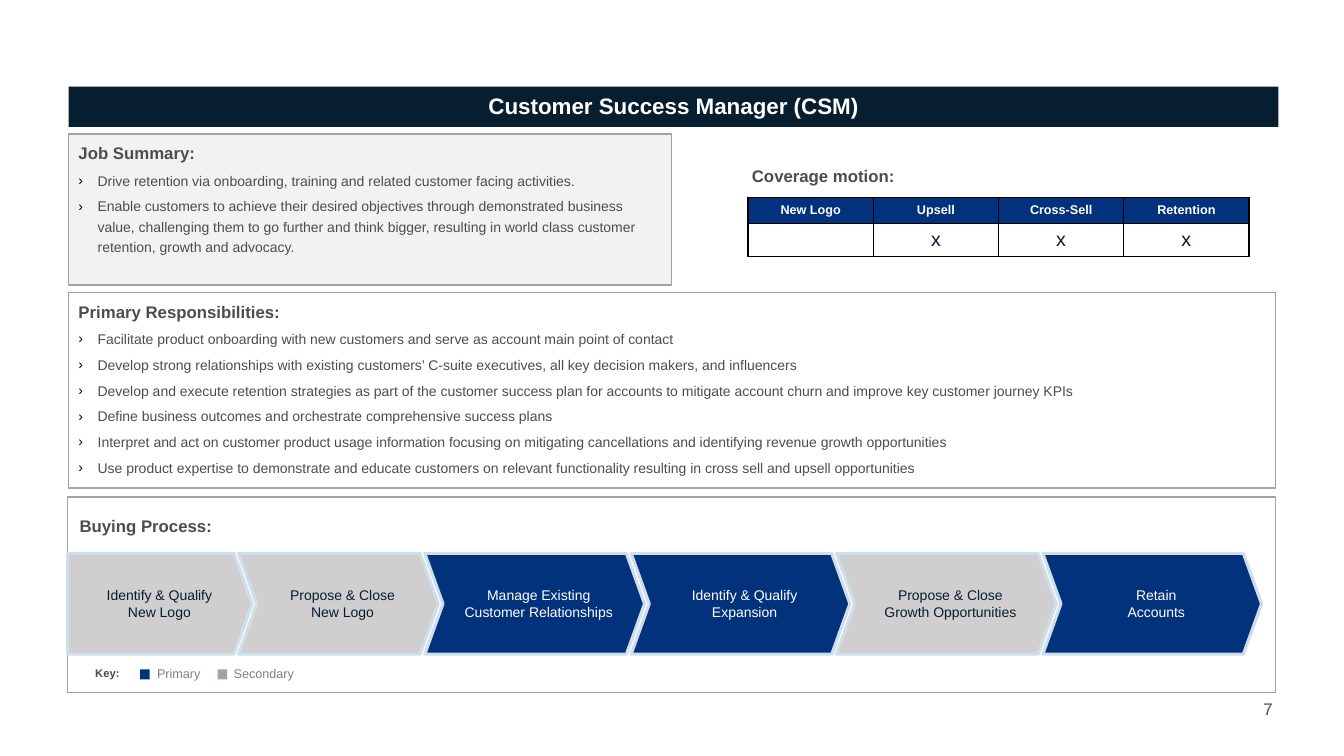
from dataclasses import dataclass

from lxml import etree
from pptx import Presentation
from pptx import util as u
from pptx.dml.color import RGBColor
from pptx.enum import shapes, text
from pptx.oxml.ns import qn

NAVY = RGBColor(0x07, 0x1E, 0x31)
BLUE = RGBColor(0x03, 0x32, 0x7C)
ICE = RGBColor(0xCE, 0xDF, 0xEB)
SILVER = RGBColor(0xD0, 0xCE, 0xCE)
GRAY = RGBColor(0x9F, 0xA4, 0x9F)
PALE = RGBColor(0xF2, 0xF2, 0xF2)
WHITE = RGBColor(0xFF, 0xFF, 0xFF)
BLACK = RGBColor(0x00, 0x00, 0x00)
INK = RGBColor(0x4D, 0x4D, 0x4D)
KEY_INK = RGBColor(0x4C, 0x48, 0x46)
LEGEND_INK = RGBColor(0x7F, 0x7F, 0x7F)

FONT = "Arial"
WIDTH, HEIGHT = u.Inches(13.33), u.Inches(7.5)
DEFAULT_INSETS = (0.1, 0.05, 0.1, 0.05)
NO_INSETS = (0, 0, 0, 0)
STEP_INSETS = (0.08, 0.12, 0, 0.12)
STEP_OVERLAP = 1.0
RECT = shapes.MSO_SHAPE.RECTANGLE
CENTER = text.PP_ALIGN.CENTER
MIDDLE = text.MSO_ANCHOR.MIDDLE


@dataclass(frozen=True)
class Area:
    """Percent shares of the slide's width and height."""
    left: float
    top: float
    width: float
    height: float

    def lengths(self) -> tuple[int, int, int, int]:
        return (int(WIDTH * self.left / 100), int(HEIGHT * self.top / 100),
                int(WIDTH * self.width / 100), int(HEIGHT * self.height / 100))


@dataclass(frozen=True)
class Section:
    area: Area
    fill: RGBColor
    heading: str
    points: tuple[str, ...]


@dataclass(frozen=True)
class Step:
    label: str
    width: float
    primary: bool


@dataclass(frozen=True)
class Label:
    area: Area
    words: str
    size: float
    color: RGBColor
    bold: bool = False
    align: text.PP_ALIGN | None = None


@dataclass(frozen=True)
class Swatch:
    left: float
    color: RGBColor


SECTIONS = (
    Section(Area(5.1, 17.73, 44.86, 20), PALE, "Job Summary:", (
        "Drive retention via onboarding, training and related customer facing activities.",
        "Enable customers to achieve their desired objectives through demonstrated business value, "
        "challenging them to go further and think bigger, resulting in world class customer "
        "retention, growth and advocacy.",
    )),
    Section(Area(5.1, 38.67, 89.8, 25.87), WHITE, "Primary Responsibilities:", (
        "Facilitate product onboarding with new customers and serve as account main point of contact",
        "Develop strong relationships with existing customers’ C-suite executives, all key decision "
        "makers, and influencers",
        "Develop and execute retention strategies as part of the customer success plan for accounts "
        "to mitigate account churn and improve key customer journey KPIs",
        "Define business outcomes and orchestrate comprehensive success plans",
        "Interpret and act on customer product usage information focusing on mitigating "
        "cancellations and identifying revenue growth opportunities",
        "Use product expertise to demonstrate and educate customers on relevant functionality "
        "resulting in cross sell and upsell opportunities",
    )),
)
STEPS = (
    Step("Identify & Qualify\nNew Logo", 13.73, False),
    Step("Propose & Close\nNew Logo", 14.85, False),
    Step("Manage Existing\nCustomer Relationships", 16.35, True),
    Step("Identify & Qualify\nExpansion", 16.28, True),
    Step("Propose & Close\nGrowth Opportunities", 16.35, False),
    Step("Retain\nAccounts", 16.28, True),
)
LABELS = (
    Label(Area(5.18, 67.6, 25.2, 4), "Buying Process:", 12, INK, True),
    Label(Area(55.21, 21.33, 17.55, 4), "Coverage motion:", 12, INK, True),
    Label(Area(5.03, 87.47, 5.93, 3.2), "Key:", 8, KEY_INK, True, CENTER),
    Label(Area(10.95, 87.47, 5.63, 3.33), "Primary", 9, LEGEND_INK),
    Label(Area(16.65, 87.47, 7.2, 3.33), "Secondary", 9, LEGEND_INK),
)
SWATCHES = (Swatch(10.43, BLUE), Swatch(16.2, GRAY))
COVERAGE = (("New Logo", "Upsell", "Cross-Sell", "Retention"), ("", "x", "x", "x"))
COVERAGE_AREA = Area(55.66, 26.13, 37.28, 7.8)
COVERAGE_ROWS = (3.4, 4.4)


def write(frame, words: str, *, size: float, color: RGBColor, bold: bool = False,
          align=None, spacing: float | None = None, before: float | None = None,
          after: float | None = None, bullet: str = "") -> None:
    paragraph = frame.paragraphs[0]
    if paragraph.runs:
        paragraph = frame.add_paragraph()
    if bullet:
        properties = paragraph._p.get_or_add_pPr()
        properties.set("marL", str(u.Inches(0.19)))
        properties.set("indent", str(-u.Inches(0.19)))
        tint = etree.SubElement(properties, qn("a:buClr"))
        etree.SubElement(tint, qn("a:srgbClr"), val=str(BLACK))
        etree.SubElement(properties, qn("a:buFont"), typeface=FONT)
        etree.SubElement(properties, qn("a:buChar"), char=bullet)
    paragraph.alignment = align
    if spacing:
        paragraph.line_spacing = spacing
    if before:
        paragraph.space_before = u.Pt(before)
    if after:
        paragraph.space_after = u.Pt(after)
    for index, line in enumerate(words.split("\n")):
        if index:
            paragraph.add_line_break()
        run = paragraph.add_run()
        run.text = line
        run.font.name, run.font.size, run.font.bold = FONT, u.Pt(size), bold
        run.font.color.rgb = color


def prepare(frame, insets: tuple = DEFAULT_INSETS, anchor=text.MSO_ANCHOR.TOP):
    frame.word_wrap = True
    frame.vertical_anchor = anchor
    (frame.margin_left, frame.margin_top,
     frame.margin_right, frame.margin_bottom) = map(u.Inches, insets)
    return frame


def draw_shape(slide, kind, area: Area, fill: RGBColor | None = None,
               line: RGBColor | None = None, weight: float = 1):
    shape = slide.shapes.add_shape(kind, *area.lengths())
    shape.shadow.inherit = False
    for part, color in ((shape.fill, fill), (shape.line.fill, line)):
        if color is None:
            part.background()
        else:
            part.solid()
            part.fore_color.rgb = color
    if line is not None:
        shape.line.width = u.Pt(weight)
    return shape


def draw_section(slide, section: Section) -> None:
    frame = prepare(draw_shape(slide, RECT, section.area, section.fill, GRAY).text_frame)
    left = text.PP_ALIGN.LEFT
    write(frame, section.heading, size=12, color=INK, bold=True, align=left, spacing=1.2, after=2)
    for point in section.points:
        write(frame, point, size=10, color=INK, align=left, spacing=1.2,
              before=2, after=2, bullet="›")


def draw_label(slide, label: Label) -> None:
    frame = prepare(slide.shapes.add_textbox(*label.area.lengths()).text_frame)
    write(frame, label.words, size=label.size, color=label.color,
          bold=label.bold, align=label.align)


def draw_steps(slide, left: float) -> None:
    for index, step in enumerate(STEPS):
        kind = shapes.MSO_SHAPE.CHEVRON if index else shapes.MSO_SHAPE.PENTAGON
        arrow = draw_shape(slide, kind, Area(left, 73.2, step.width, 13.33),
                           BLUE if step.primary else SILVER, ICE, 2.25)
        arrow.adjustments[0] = 0.18
        write(prepare(arrow.text_frame, STEP_INSETS, MIDDLE), step.label, size=10,
              color=WHITE if step.primary else NAVY, align=CENTER)
        left += step.width - STEP_OVERLAP


def border(cell) -> None:
    properties = cell._tc.get_or_add_tcPr()
    for side in ("lnL", "lnR", "lnT", "lnB"):
        edge = etree.SubElement(properties, qn(f"a:{side}"), w=str(u.Pt(1)))
        paint = etree.SubElement(edge, qn("a:solidFill"))
        etree.SubElement(paint, qn("a:srgbClr"), val=str(BLACK))


def draw_coverage(slide) -> None:
    table = slide.shapes.add_table(len(COVERAGE), len(COVERAGE[0]),
                                   *COVERAGE_AREA.lengths()).table
    table.horz_banding = table.first_row = False
    for row, (motions, share) in enumerate(zip(COVERAGE, COVERAGE_ROWS)):
        table.rows[row].height = int(HEIGHT * share / 100)
        for column, motion in enumerate(motions):
            cell = table.cell(row, column)
            border(cell)
            if row:
                cell.fill.background()
            else:
                cell.fill.solid()
                cell.fill.fore_color.rgb = BLUE
            if motion:
                write(cell.text_frame, motion, size=14 if row else 9,
                      color=NAVY if row else WHITE, bold=not row, align=CENTER)
            else:
                etree.SubElement(cell.text_frame.paragraphs[0]._p, qn("a:endParaRPr"), sz="1400")


def main() -> None:
    deck = Presentation()
    deck.slide_width, deck.slide_height = WIDTH, HEIGHT
    slide = deck.slides.add_slide(deck.slide_layouts[6])
    title = draw_shape(slide, RECT, Area(5.1, 11.47, 90.02, 5.33), NAVY)
    write(prepare(title.text_frame, NO_INSETS, MIDDLE), "Customer Success Manager (CSM)",
          size=16, color=WHITE, bold=True, align=CENTER, spacing=0.9)
    number = slide.shapes.add_textbox(*Area(94, 92.4, 2.55, 2.67).lengths())
    write(prepare(number.text_frame, NO_INSETS, MIDDLE), "7", size=12, color=INK)
    for section in SECTIONS:
        draw_section(slide, section)
    draw_shape(slide, RECT, Area(5.03, 65.73, 89.87, 25.87), line=GRAY)
    for swatch in SWATCHES:
        draw_shape(slide, RECT, Area(swatch.left, 88.53, 0.7, 1.33), swatch.color)
    for label in LABELS:
        draw_label(slide, label)
    draw_steps(slide, 5.03)
    draw_coverage(slide)
    deck.save("out.pptx")


if __name__ == "__main__":
    main()
